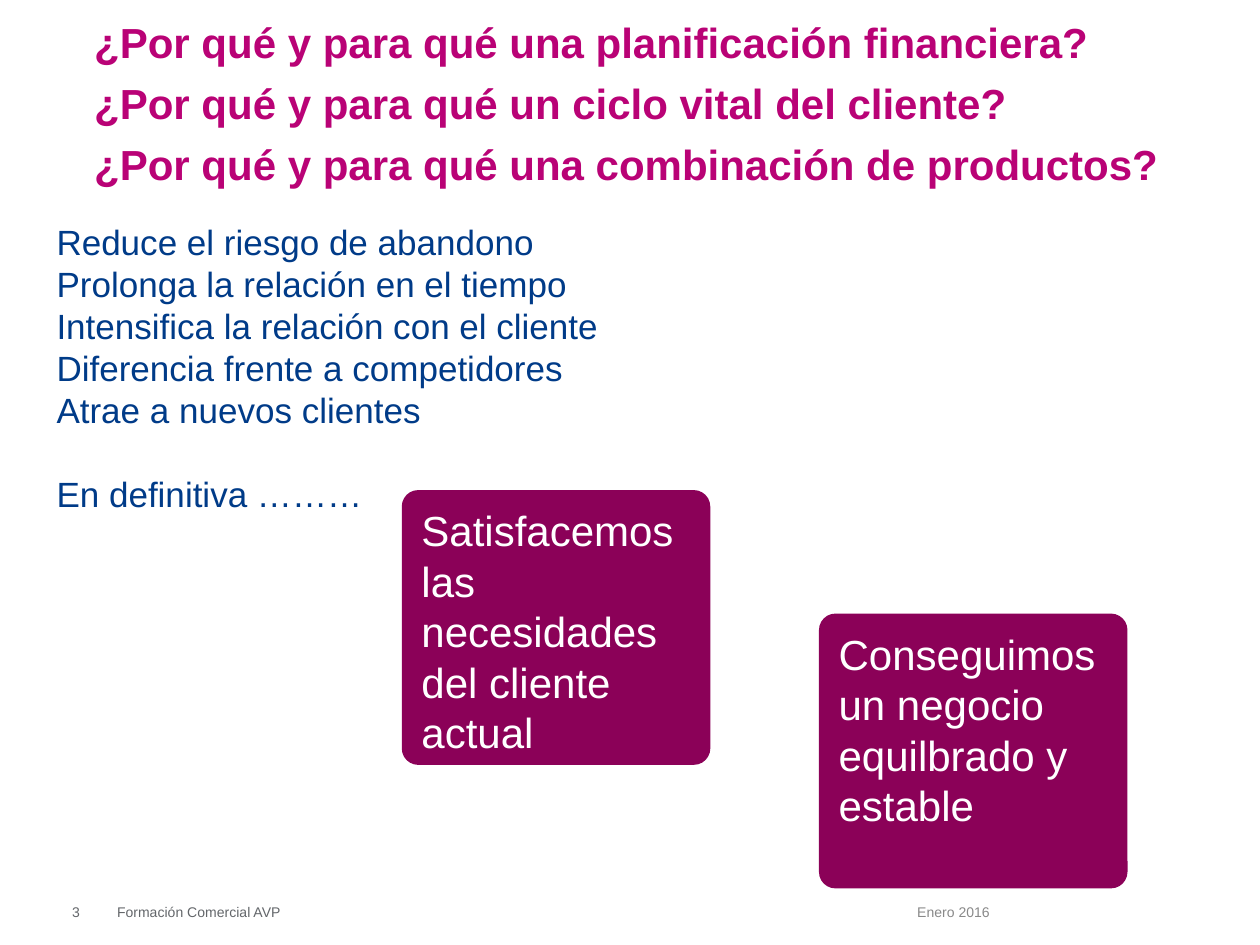
from dataclasses import dataclass

import pptx
import pptx.dml.color
import pptx.enum.shapes
import pptx.enum.text
import pptx.util

Cm = pptx.util.Cm
Pt = pptx.util.Pt
Align = pptx.enum.text.PP_ALIGN
Anchor = pptx.enum.text.MSO_ANCHOR

MAGENTA = "B90276"
PLUM = "8B0158"
NAVY = "003B88"
DARK_GRAY = "63666A"
LIGHT_GRAY = "898989"
WHITE = "FFFFFF"

NO_MARGINS = (0, 0, 0, 0)
TEXT_MARGINS = (0.25, 0.13, 0.25, 0.13)
CARD_MARGINS = (0.3, 0.2, 0.25, 0.13)
CARD_WIDTH = 6.22
CARD_HEIGHT = 5.54
FOOTER_TOP = 18.08
FOOTER_HEIGHT = 0.61


@dataclass(frozen=True)
class TextStyle:
    size: float
    color: str
    bold: bool = False
    align: Align = Align.LEFT
    anchor: Anchor = Anchor.TOP
    margins: tuple = NO_MARGINS
    space_after: float = 0
    wrap: bool = True


@dataclass(frozen=True)
class TextBlock:
    left: float
    top: float
    width: float
    height: float
    lines: tuple
    style: TextStyle


@dataclass(frozen=True)
class Card:
    left: float
    top: float
    text: str


TITLE_STYLE = TextStyle(24, MAGENTA, bold=True, space_after=6, wrap=False)
BENEFIT_STYLE = TextStyle(20, NAVY, margins=TEXT_MARGINS)
CARD_STYLE = TextStyle(24, WHITE, margins=CARD_MARGINS)
DATE_STYLE = TextStyle(8, LIGHT_GRAY, anchor=Anchor.MIDDLE)
FOOTER_STYLE = TextStyle(8, DARK_GRAY, anchor=Anchor.MIDDLE)
NUMBER_STYLE = TextStyle(8, DARK_GRAY, align=Align.CENTER, anchor=Anchor.MIDDLE)

FOOTERS = (
    TextBlock(18.49, FOOTER_TOP, 5.92, FOOTER_HEIGHT, ("Enero 2016",), DATE_STYLE),
    TextBlock(2.36, FOOTER_TOP, 15.9, FOOTER_HEIGHT, ("Formación Comercial AVP",), FOOTER_STYLE),
    TextBlock(0.71, FOOTER_TOP, 1.65, FOOTER_HEIGHT, ("3",), NUMBER_STYLE),
)
TITLE = TextBlock(1.9, 0.33, 21.64, 3.5, (
    "¿Por qué y para qué una planificación financiera?",
    "¿Por qué y para qué un ciclo vital del cliente?",
    "¿Por qué y para qué una combinación de productos?",
), TITLE_STYLE)
BENEFITS = TextBlock(0.89, 4.32, 11.81, 6.25, (
    "Reduce el riesgo de abandono",
    "Prolonga la relación en el tiempo",
    "Intensifica la relación con el cliente",
    "Diferencia frente a competidores",
    "Atrae a nuevos clientes",
    "En definitiva ………",
), BENEFIT_STYLE)
CARDS = (
    Card(8.1, 9.88, "Satisfacemos las necesidades del cliente actual"),
    Card(16.51, 12.37, "Conseguimos un negocio equilbrado y estable"),
)


def color(value: str) -> pptx.dml.color.RGBColor:
    return pptx.dml.color.RGBColor.from_string(value)


def write_text(shape, lines: tuple, style: TextStyle) -> None:
    text_frame = shape.text_frame
    text_frame.text = "\n".join(lines)
    text_frame.word_wrap = style.wrap
    text_frame.vertical_anchor = style.anchor
    left, top, right, bottom = style.margins
    text_frame.margin_left = Cm(left)
    text_frame.margin_top = Cm(top)
    text_frame.margin_right = Cm(right)
    text_frame.margin_bottom = Cm(bottom)
    for paragraph in text_frame.paragraphs:
        paragraph.alignment = style.align
        paragraph.space_after = Pt(style.space_after)
        for run in paragraph.runs:
            run.font.name = "Arial"
            run.font.size = Pt(style.size)
            run.font.bold = style.bold
            run.font.color.rgb = color(style.color)


def add_text(slide, block: TextBlock):
    shape = slide.shapes.add_textbox(
        Cm(block.left), Cm(block.top), Cm(block.width), Cm(block.height))
    write_text(shape, block.lines, block.style)
    return shape


def add_card(slide, card: Card) -> None:
    shape = slide.shapes.add_shape(
        pptx.enum.shapes.MSO_SHAPE.ROUNDED_RECTANGLE,
        Cm(card.left), Cm(card.top), Cm(CARD_WIDTH), Cm(CARD_HEIGHT))
    shape.adjustments[0] = 0.06
    shape.shadow.inherit = False
    shape.fill.solid()
    shape.fill.fore_color.rgb = color(PLUM)
    shape.line.fill.background()
    write_text(shape, (card.text,), CARD_STYLE)


def main() -> None:
    presentation = pptx.Presentation()
    presentation.slide_width = Cm(25.4)
    presentation.slide_height = Cm(19.05)
    slide = presentation.slides.add_slide(presentation.slide_layouts[6])
    for footer in FOOTERS:
        add_text(slide, footer)
    add_text(slide, TITLE)
    benefits = add_text(slide, BENEFITS)
    benefits.text_frame.paragraphs[-1].space_before = Pt(24)
    for card in CARDS:
        add_card(slide, card)
    presentation.save("out.pptx")


if __name__ == "__main__":
    main()
